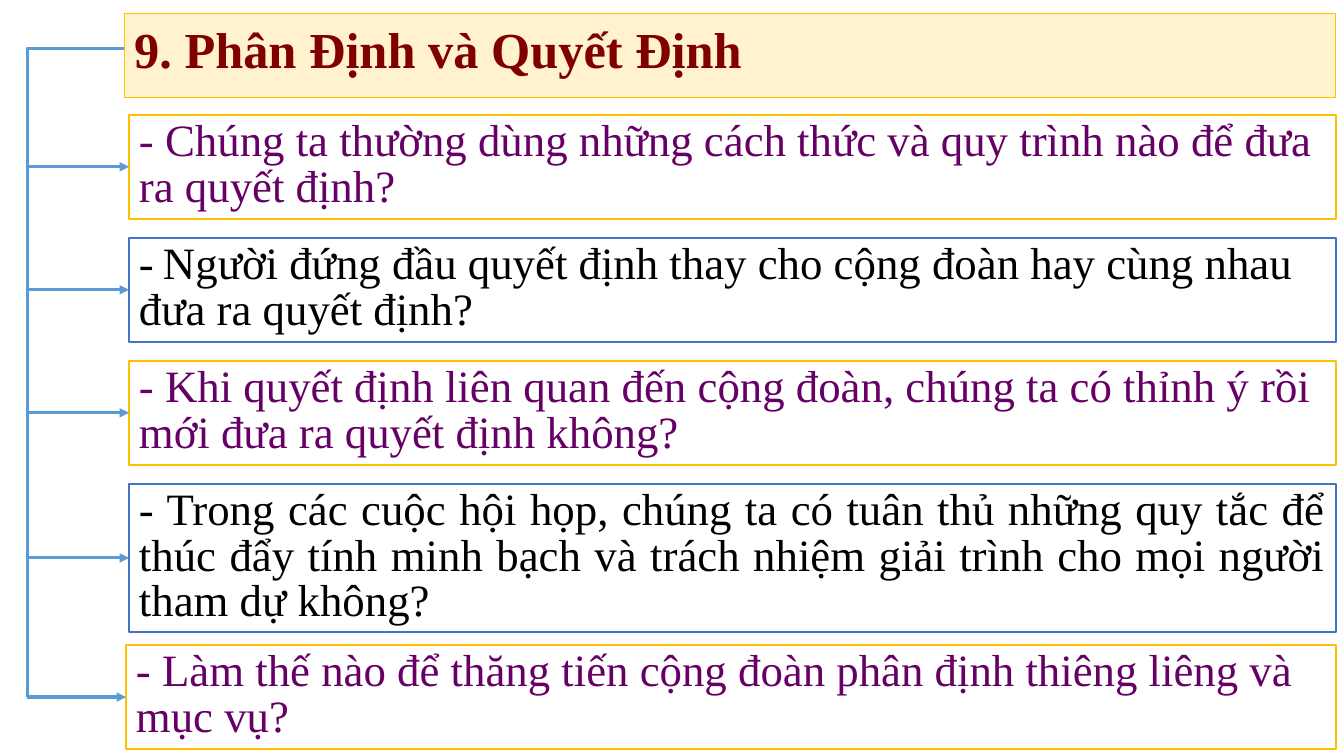
"""Build the slide on discernment and decision, with five linked questions."""
from lxml.etree import SubElement
from pptx import Presentation
from pptx.dml.color import RGBColor
from pptx.enum.shapes import MSO_CONNECTOR, MSO_SHAPE
from pptx.enum.text import MSO_ANCHOR, MSO_AUTO_SIZE, PP_ALIGN
from pptx.oxml.ns import qn
from pptx.util import Inches, Pt

TITLE = "9. Phân Định và Quyết Định"
LEFT, BOTH = PP_ALIGN.LEFT, PP_ALIGN.JUSTIFY
ITEMS = [
    (["- Chúng ta thường dùng những cách thức và quy trình nào để đưa ra quyết định?"], 2, LEFT),
    (["- ", "Người đứng đầu quyết định thay cho cộng đoàn hay cùng nhau đưa ra quyết định?"], 2, LEFT),
    (["- Khi quyết định liên quan đến cộng đoàn, chúng ta có thỉnh ý rồi mới đưa ra quyết định không?"], 2, LEFT),
    (["- Trong các cuộc hội họp, chúng ta có tuân thủ những quy tắc để thúc đẩy tính minh bạch "
      "và trách nhiệm giải trình cho mọi người tham dự không?"], 3, BOTH),
    (["- Làm thế nào để thăng tiến cộng đoàn phân định thiêng liêng và mục vụ?"], 2, LEFT),
]

WHITE = RGBColor(0xFF, 0xFF, 0xFF)
BLACK = RGBColor(0, 0, 0)
CREAM = RGBColor(0xFF, 0xF2, 0xCC)
GOLD = RGBColor(0xFF, 0xC0, 0x00)
BLUE = RGBColor(0x44, 0x72, 0xC4)
SKY = RGBColor(0x5B, 0x9B, 0xD5)
MAROON = RGBColor(0x80, 0, 0)
PURPLE = RGBColor(0x66, 0, 0x66)
STYLES = [(GOLD, PURPLE), (BLUE, BLACK)]

WIDE, HIGH = 13.33, 7.5
RIGHT, TRUNK = 13.25, 0.27
TOP, LINE, PAD, GAP = 1.14, 0.44, 0.15, 0.19
LAST = (1.25, 6.4)


def paint(shape, fill, edge, width):
    """Fill and outline a box."""
    shape.fill.solid()
    shape.fill.fore_color.rgb = fill
    shape.line.color.rgb = edge
    shape.line.width = Pt(width)


def write(shape, parts, align, space, look):
    """Put formatted runs in a box."""
    frame = shape.text_frame
    for name, value in dict(word_wrap=True, vertical_anchor=MSO_ANCHOR.TOP,
                            auto_size=MSO_AUTO_SIZE.SHAPE_TO_FIT_TEXT).items():
        setattr(frame, name, value)
    para = frame.paragraphs[0]
    para.alignment, para.line_spacing = align, space
    for part in parts:
        run = para.add_run()
        run.text = part
        run.font.color.rgb = look["color"]
        for name in ("name", "size", "bold"):
            setattr(run.font, name, look[name])
    if len(parts) > 1:
        para.runs[0].font._element.set("spc", "-150")


def link(shapes, kind, start, end):
    """Draw a connector without a shadow."""
    wire = shapes.add_connector(kind, *map(Inches, start + end))
    wire.line.color.rgb = SKY
    wire.line.width = Pt(2.25)
    SubElement(wire._element.spPr, qn("a:effectLst"))
    return wire


def main():
    """Lay out the slide and save it."""
    deck = Presentation()
    deck.slide_width, deck.slide_height = Inches(WIDE), Inches(HIGH)
    slide = deck.slides.add_slide(deck.slide_layouts[5])
    shapes = slide.shapes
    title = shapes.title
    title.left, title.top, title.width, title.height = map(Inches, (1.23, 0.13, 12.01, 0.71))
    paint(title, CREAM, GOLD, 0.5)
    write(title, [TITLE], LEFT, 1.0,
          dict(name="Times New Roman", size=Pt(36), bold=True, color=MAROON))

    top = TOP
    for i, (parts, rows, align) in enumerate(ITEMS):
        edge, ink = STYLES[i % 2]
        left = 1.28
        if i == len(ITEMS) - 1:
            left, top = LAST
        high = rows * LINE + PAD
        box = shapes.add_shape(MSO_SHAPE.RECTANGLE,
                               *map(Inches, (left, top, RIGHT - left, high)))
        box.shadow.inherit = False
        paint(box, WHITE, edge, 1.5)
        write(box, parts, align, 0.85,
              dict(name="Times New Roman", size=Pt(32), bold=False, color=ink))

        mid = top + high / 2
        bend = link(shapes, MSO_CONNECTOR.ELBOW, (1.23, 0.48), (TRUNK, mid))
        bend._element.spPr.find(qn("a:prstGeom")).set("prst", "bentConnector2")
        bend.begin_connect(title, 1)
        arrow = link(shapes, MSO_CONNECTOR.STRAIGHT, (TRUNK, mid), (left, mid))
        arrow.end_connect(box, 1)
        SubElement(arrow.line._get_or_add_ln(), qn("a:tailEnd"), type="triangle")
        top += high + GAP

    deck.save("out.pptx")


if __name__ == "__main__":
    main()
